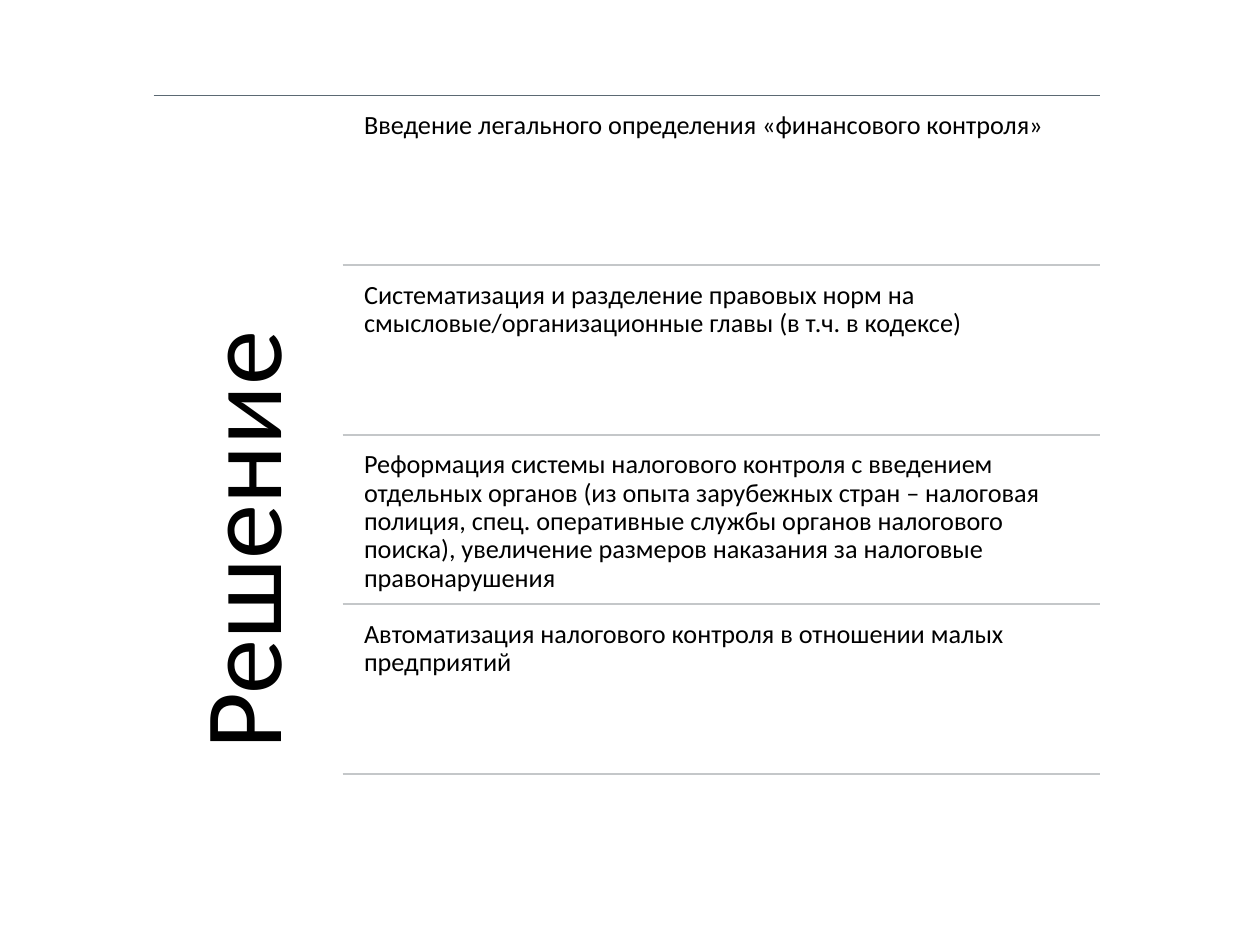
from lxml import etree
from pptx import Presentation
from pptx.dml.color import RGBColor
from pptx.enum import shapes, text
from pptx.oxml.ns import qn
from pptx.util import Inches, Pt

COLORS = {"text": "000000", "top_rule": "5B6973", "rule": "C4C7C9"}
FONT = "Calibri"
TITLE = "Решение"
SOLUTIONS = [
    "Введение легального определения «финансового контроля»",
    "Систематизация и разделение правовых норм на смысловые/организационные главы (в т.ч. в кодексе)",
    "Реформация системы налогового контроля с введением отдельных органов "
    "(из опыта зарубежных стран – налоговая полиция, спец. оперативные службы органов "
    "налогового поиска), увеличение размеров наказания за налоговые правонарушения",
    "Автоматизация налогового контроля в отношении малых предприятий",
]


def add_rule(slide, left, top, width, color, weight):
    rule = slide.shapes.add_connector(
        shapes.MSO_CONNECTOR.STRAIGHT, left, top, left + width, top)
    rule.line.color.rgb = RGBColor.from_string(COLORS[color])
    rule.line.width = Pt(weight)
    etree.SubElement(rule._element.spPr, qn("a:effectLst"))


def write_text(shape, content, size, inset):
    frame = shape.text_frame
    frame.word_wrap = True
    frame.auto_size = text.MSO_AUTO_SIZE.NONE
    frame.vertical_anchor = text.MSO_ANCHOR.TOP
    frame.margin_left = frame.margin_right = inset
    frame.margin_top = frame.margin_bottom = inset
    paragraph = frame.paragraphs[0]
    paragraph.alignment = text.PP_ALIGN.LEFT
    paragraph.line_spacing = 0.9
    paragraph.space_before = Pt(0)
    run = paragraph.add_run()
    run.text = content
    run.font.name = FONT
    run.font.size = Pt(size)
    run.font.color.rgb = RGBColor.from_string(COLORS["text"])


def place_title(slide, left, top, width, height):
    """Turn the title to read upwards, filling the upright box given."""
    title = slide.shapes.title
    shift = (height - width) // 2
    title.left, title.top = left - shift, top + shift
    title.width, title.height = height, width
    title.rotation = 270
    write_text(title, TITLE, 63, Inches(0.26))


def add_solutions(slide, left, top, width, height):
    """Stack equal rows, each closed by a rule."""
    pitch = height // len(SOLUTIONS)
    indent, gap = Inches(0.11), Inches(0.07)
    for index, solution in enumerate(SOLUTIONS):
        row_top = top + index * pitch
        box = slide.shapes.add_textbox(
            left + indent, row_top + gap, width - indent, pitch - gap)
        write_text(box, solution, 15, Inches(0.06))
        add_rule(slide, left, row_top + pitch, width, "rule", 1.25)


def main():
    presentation = Presentation()
    presentation.slide_width = Inches(10)
    presentation.slide_height = Inches(7.5)
    slide = presentation.slides.add_slide(presentation.slide_layouts[5])

    left, top, width = Inches(1.22), Inches(0.76), Inches(7.51)
    title_width = Inches(1.5)
    add_rule(slide, left, top, width, "top_rule", 0.75)
    place_title(slide, left, top, title_width, Inches(5.45))
    add_solutions(slide, left + title_width, top, width - title_width, Inches(5.38))

    presentation.save("out.pptx")


if __name__ == "__main__":
    main()
